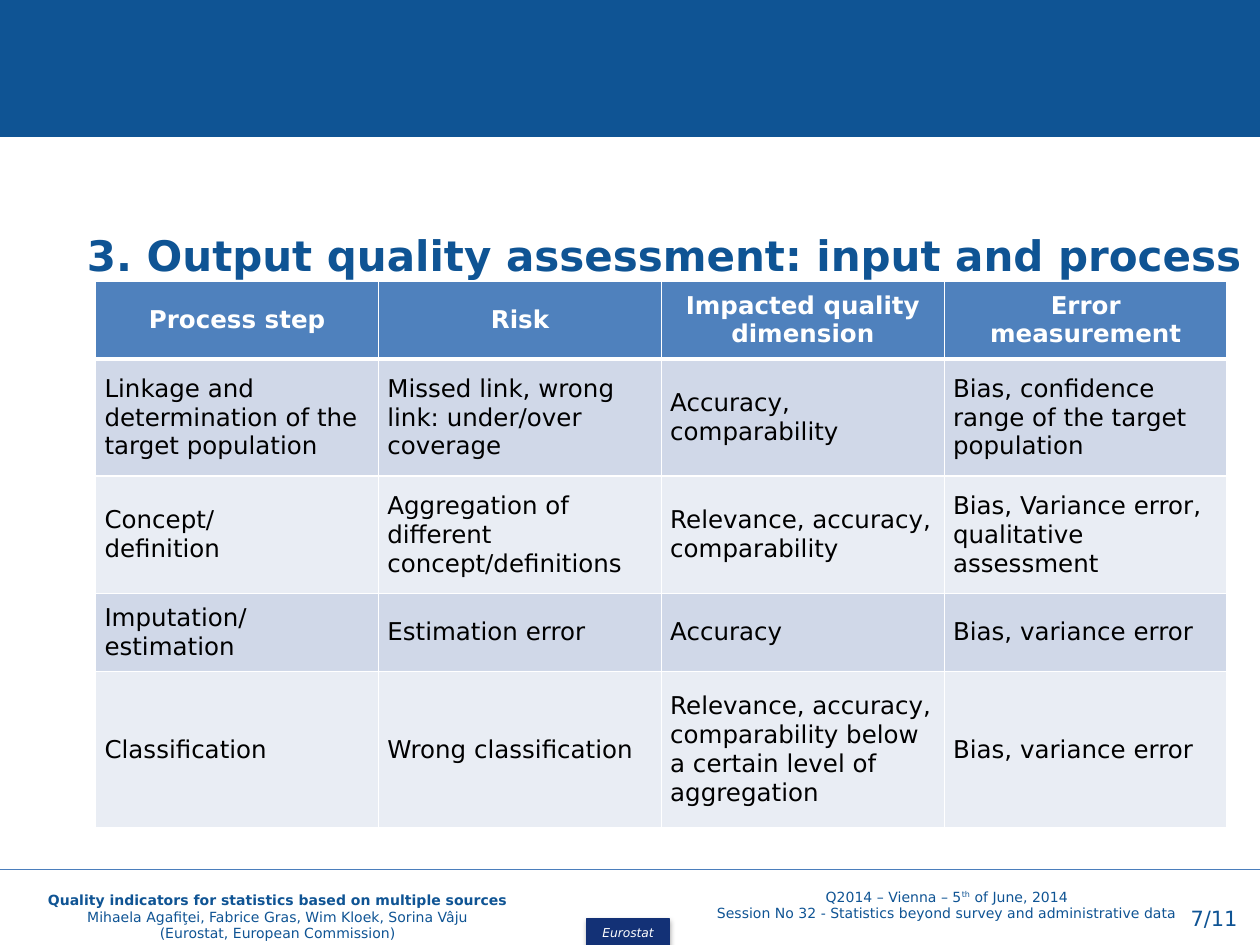
import copy

import pptx
import pptx.dml.color
import pptx.enum.shapes
import pptx.enum.text
import pptx.oxml
import pptx.oxml.ns
import pptx.util

Inches = pptx.util.Inches
Pt = pptx.util.Pt
ALIGN = pptx.enum.text.PP_ALIGN
ANCHOR = pptx.enum.text.MSO_ANCHOR
SHAPE = pptx.enum.shapes.MSO_SHAPE
FONT = "DejaVu Sans"
BLUE = "0F5494"
NAMESPACE = pptx.oxml.ns.nsdecls("a")


def color(hex_string):
    return pptx.dml.color.RGBColor.from_string(hex_string)


def write(paragraph, text, size=8, fill=BLUE, bold=False, italic=False,
          align=ALIGN.LEFT, spacing=None, baseline=None):
    paragraph.alignment = align
    if spacing:
        paragraph.line_spacing = spacing
    for index, line in enumerate(text.split("\n")):
        if index:
            paragraph.add_line_break()
        run = paragraph.add_run()
        run.text = line
        run.font.name = FONT
        run.font.size = Pt(size)
        run.font.bold = bold
        run.font.italic = italic
        run.font.color.rgb = color(fill)
        if baseline:
            run._r.get_or_add_rPr().set("baseline", str(baseline))
    # Line breaks take the format of the text around them
    for line_break in paragraph._p.findall(pptx.oxml.ns.qn("a:br")):
        line_break.append(copy.deepcopy(run._r.rPr))


presentation = pptx.Presentation()
presentation.slide_width = Inches(10)
presentation.slide_height = Inches(7.5)
slide = presentation.slides.add_slide(presentation.slide_layouts[5])
shapes = slide.shapes

# Top band and footer badge
bars = []
for left, top, width, height, fill in [
    (0, 0, 10, 1.08, BLUE),
    (4.66, 7.29, 0.65, 0.22, "133176"),
]:
    bar = shapes.add_shape(SHAPE.RECTANGLE, Inches(left), Inches(top),
                           Inches(width), Inches(height))
    bar.shadow.inherit = False
    bar.fill.solid()
    bar.fill.fore_color.rgb = color(fill)
    bar.line.color.rgb = color(fill)
    bar.line.width = Pt(0.75)
    bars.append(bar)

badge = bars[1]
badge.text_frame.vertical_anchor = ANCHOR.MIDDLE
write(badge.text_frame.paragraphs[0], "Eurostat", size=7, fill="FFFFFF",
      italic=True, align=ALIGN.CENTER)
effects = badge._element.spPr.find(pptx.oxml.ns.qn("a:effectLst"))
effects.append(pptx.oxml.parse_xml(
    f'<a:outerShdw {NAMESPACE} blurRad="{Pt(3.1)}" dist="{Pt(1.8)}" dir="5400000" '
    'rotWithShape="0"><a:srgbClr val="000000"><a:alpha val="35000"/></a:srgbClr>'
    '</a:outerShdw>'))

# Title
title = shapes.title
title.left, title.top = Inches(0.59), Inches(1.57)
title.width, title.height = Inches(9.53), Inches(0.63)
title.text_frame.word_wrap = True
title.text_frame.vertical_anchor = ANCHOR.TOP
title.text_frame.auto_size = pptx.enum.text.MSO_AUTO_SIZE.SHAPE_TO_FIT_TEXT
write(title.text_frame.paragraphs[0],
      "3. Output quality assessment: input and process",
      size=24, bold=True, spacing=1.5)

# Risk table
rows = [
    ["Process step", "Risk", "Impacted quality dimension", "Error measurement"],
    ["Linkage and determination of the target population",
     "Missed link, wrong link: under/over coverage",
     "Accuracy, comparability",
     "Bias, confidence range of the target population"],
    ["Concept/\ndefinition",
     "Aggregation of different concept/definitions",
     "Relevance, accuracy, comparability",
     "Bias, Variance error, qualitative assessment"],
    ["Imputation/\nestimation", "Estimation error", "Accuracy",
     "Bias, variance error"],
    ["Classification", "Wrong classification",
     "Relevance, accuracy, comparability below a certain level of aggregation",
     "Bias, variance error"],
]
row_heights = [0.62, 0.93, 0.93, 0.62, 1.24]
table = shapes.add_table(len(rows), len(rows[0]), Inches(0.76), Inches(2.23),
                         Inches(8.98), Inches(4.35)).table
for column in table.columns:
    column.width = Inches(8.98 / len(rows[0]))
for row_index, texts in enumerate(rows):
    header = row_index == 0
    table.rows[row_index].height = Inches(row_heights[row_index])
    for column_index, text in enumerate(texts):
        cell = table.cell(row_index, column_index)
        cell.vertical_anchor = ANCHOR.MIDDLE
        cell.margin_left = cell.margin_right = Inches(0.07)
        cell.margin_top = cell.margin_bottom = 0
        write(cell.text_frame.paragraphs[0], text, size=14, bold=header,
              fill="FFFFFF" if header else "000000",
              align=ALIGN.CENTER if header else ALIGN.LEFT)
        for side in "LRTB":
            thick = (header and side == "B") or (row_index == 1 and side == "T")
            cell._tc.get_or_add_tcPr().append(pptx.oxml.parse_xml(
                f'<a:ln{side} {NAMESPACE} w="{Pt(3 if thick else 1)}"><a:solidFill>'
                f'<a:srgbClr val="FFFFFF"/></a:solidFill></a:ln{side}>'))
        cell.fill.solid()
        band = "D0D8E8" if row_index % 2 else "E9EDF4"
        cell.fill.fore_color.rgb = color("4F81BD" if header else band)

# Footer rule
rule = shapes.add_connector(pptx.enum.shapes.MSO_CONNECTOR.STRAIGHT,
                            Inches(0), Inches(6.9), Inches(10.04), Inches(6.9))
rule.line.color.rgb = color("4B7EBC")
rule.line.width = Pt(0.75)
rule._element.spPr.append(pptx.oxml.parse_xml(f"<a:effectLst {NAMESPACE}/>"))

# Footer text boxes
frames = []
for left, top, width, height in [
    (9.35, 7.04, 0.79, 0.4),
    (0, 6.96, 4.41, 0.57),
    (5.31, 7, 4.41, 0.37),
]:
    box = shapes.add_textbox(Inches(left), Inches(top), Inches(width), Inches(height))
    box.text_frame.word_wrap = True
    box.text_frame.auto_size = pptx.enum.text.MSO_AUTO_SIZE.SHAPE_TO_FIT_TEXT
    frames.append(box.text_frame)
page_number, authors, event = frames

write(page_number.paragraphs[0], "7/11", size=12, spacing=1.5)

write(authors.paragraphs[0],
      "Quality indicators for statistics based on multiple sources",
      bold=True, align=ALIGN.CENTER, spacing=1.5)
for text in ["Mihaela Agafiţei, Fabrice Gras, Wim Kloek, Sorina Vâju",
             "(Eurostat, European Commission)"]:
    write(authors.add_paragraph(), text, align=ALIGN.CENTER)

for text, baseline in [("Q2014 – Vienna – 5", None), ("th", 30000),
                       (" of June, 2014", None)]:
    write(event.paragraphs[0], text, align=ALIGN.CENTER, baseline=baseline)
write(event.add_paragraph(),
      "Session No 32 - Statistics beyond survey and administrative data",
      align=ALIGN.CENTER)

presentation.save("out.pptx")
